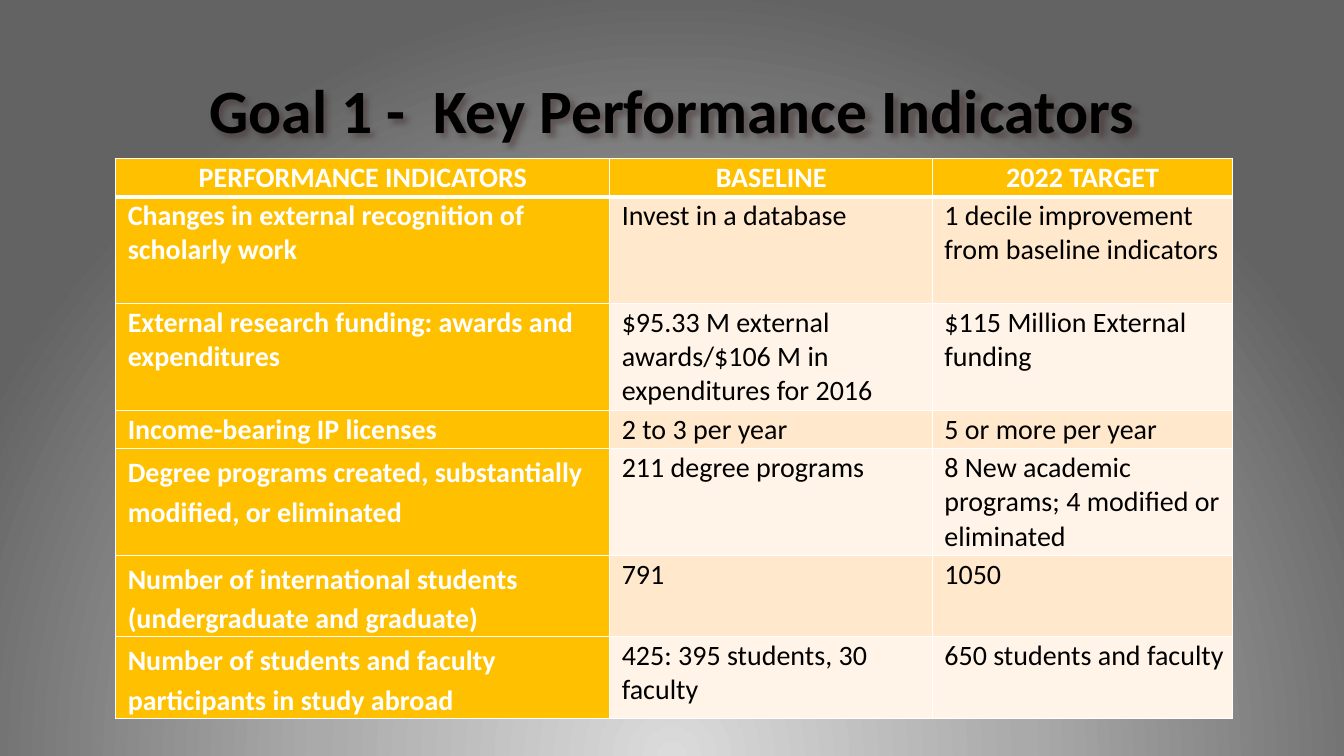
from lxml import etree
from pptx import Presentation
from pptx.dml.color import RGBColor
from pptx.enum.text import MSO_ANCHOR, PP_ALIGN
from pptx.oxml import parse_xml
from pptx.oxml.ns import nsdecls, qn
from pptx.util import Cm, Pt

CENTER, LEFT = PP_ALIGN.CENTER, PP_ALIGN.LEFT
MIDDLE, TOP = MSO_ANCHOR.MIDDLE, MSO_ANCHOR.TOP
BLACK = RGBColor(0x00, 0x00, 0x00)
WHITE = RGBColor(0xFF, 0xFF, 0xFF)
GOLD = RGBColor(0xFF, 0xC0, 0x00)
PEACH = RGBColor(0xFF, 0xE8, 0xCC)
CREAM = RGBColor(0xFF, 0xF4, 0xE7)
SHADOW = RGBColor(0x3A, 0x20, 0x20)
GLOW = RGBColor(0xDB, 0xDB, 0xDB)
SILVER = RGBColor(0xAA, 0xAA, 0xAA)
GRAPHITE = RGBColor(0x63, 0x63, 0x63)

COLUMN_WIDTHS = (12.45, 8.13, 7.57)
HEADER_HEIGHT = 0.97
HEADINGS = ("PERFORMANCE INDICATORS", "BASELINE", "2022 TARGET")
# fields: row height, line spacing of the indicator, indicator, baseline, target
INDICATORS = (
    (2.69, 1, "Changes in external recognition of scholarly work",
     "Invest in a database", "1 decile improvement from baseline indicators"),
    (2.69, 1, "External research funding: awards and expenditures",
     "$95.33 M external awards/$106 M in expenditures for 2016",
     "$115 Million External funding"),
    (0.97, 1, "Income-bearing IP licenses", "2 to 3 per year", "5 or more per year"),
    (2.69, 1.15, "Degree programs created, substantially modified, or eliminated",
     "211 degree programs", "8 New academic programs; 4 modified or eliminated"),
    (2.03, 1.15, "Number of international students (undergraduate and graduate)",
     "791", "1050"),
    (2.03, 1.15, "Number of students and faculty participants in study abroad",
     "425: 395 students, 30 faculty", "650 students and faculty"),
)


def write(frame, text, size=20, color=BLACK, bold=False, align=LEFT, spacing=1, indent=0):
    """Put one formatted paragraph into a text frame."""
    paragraph = frame.paragraphs[0]
    paragraph.alignment = align
    paragraph.line_spacing = spacing
    if indent:
        properties = paragraph._p.get_or_add_pPr()
        properties.set("marL", str(Cm(indent)))
        properties.set("indent", "0")
    run = paragraph.add_run()
    run.text = text
    run.font.name = "Calibri"
    run.font.size = Pt(size)
    run.font.bold = bold
    run.font.color.rgb = color


def paint_background(slide):
    """Fill the slide with a circular glow rising from below its bottom edge."""
    slide.background.fill.solid()
    properties = slide.element.find(".//" + qn("p:bgPr"))
    stops = "".join(
        f'<a:gs pos="{place * 1000}"><a:srgbClr val="{color}"/></a:gs>'
        for place, color in ((0, GLOW), (46, SILVER), (100, GRAPHITE)))
    properties.replace(properties[0], parse_xml(
        f'<a:gradFill {nsdecls("a")} rotWithShape="1"><a:gsLst>{stops}</a:gsLst>'
        '<a:path path="circle"><a:fillToRect l="50000" t="130000" r="50000" b="-30000"/>'
        '</a:path></a:gradFill>'))


def add_title(slide, left, top, width, height):
    """Place the shadowed slide title in the given box."""
    title = slide.shapes.add_textbox(Cm(left), Cm(top), Cm(width), Cm(height))
    title.text_frame.word_wrap = True
    title.text_frame.vertical_anchor = MIDDLE
    write(title.text_frame, "Goal 1 -  Key Performance Indicators",
          size=44, bold=True, align=CENTER, spacing=0.9)
    title._element.spPr.append(parse_xml(
        f'<a:effectLst {nsdecls("a")}>'
        f'<a:outerShdw blurRad="{Pt(4)}" dist="{Pt(3)}" dir="2700000" algn="tl">'
        f'<a:srgbClr val="{SHADOW}"><a:alpha val="43000"/></a:srgbClr>'
        '</a:outerShdw></a:effectLst>'))


def set_borders(cell, top=1, bottom=1):
    """Draw white borders around a table cell, with widths in points."""
    properties = cell._tc.get_or_add_tcPr()
    widths = {"lnL": 1, "lnR": 1, "lnT": top, "lnB": bottom}
    for position, (side, width) in enumerate(widths.items()):
        line = etree.Element(qn("a:" + side), w=str(Pt(width)))
        fill = etree.SubElement(line, qn("a:solidFill"))
        etree.SubElement(fill, qn("a:srgbClr"), val=str(WHITE))
        properties.insert(position, line)


def fill_cell(cell, text, fill, anchor=TOP, top=1, bottom=1, **text_format):
    """Set the text, fill, margins and borders of a table cell."""
    cell.margin_left = cell.margin_right = Cm(0.05)
    cell.margin_top = cell.margin_bottom = Cm(0.05)
    cell.vertical_anchor = anchor
    cell.fill.solid()
    cell.fill.fore_color.rgb = fill
    write(cell.text_frame, text, **text_format)
    set_borders(cell, top, bottom)


def add_indicator_table(slide, left, top):
    """Place the table of performance indicators at the given corner."""
    heights = [HEADER_HEIGHT] + [indicator[0] for indicator in INDICATORS]
    table = slide.shapes.add_table(
        len(heights), len(COLUMN_WIDTHS), Cm(left), Cm(top),
        Cm(sum(COLUMN_WIDTHS)), Cm(sum(heights))).table
    table.horz_banding = False
    for column, width in zip(table.columns, COLUMN_WIDTHS):
        column.width = Cm(width)
    for row, height in zip(table.rows, heights):
        row.height = Cm(height)
    for column, heading in enumerate(HEADINGS):
        fill_cell(table.cell(0, column), heading, GOLD, anchor=MIDDLE, bottom=3,
                  color=WHITE, bold=True, align=CENTER)
    for row, (_, spacing, indicator, *values) in enumerate(INDICATORS, 1):
        top_border = 3 if row == 1 else 1
        fill_cell(table.cell(row, 0), indicator, GOLD, top=top_border,
                  color=WHITE, bold=True, spacing=spacing, indent=0.25)
        for column, value in enumerate(values, 1):
            fill_cell(table.cell(row, column), value, PEACH if row % 2 else CREAM,
                      top=top_border, indent=0.25)


def main():
    """Build the slide and save the presentation."""
    presentation = Presentation()
    presentation.slide_width, presentation.slide_height = Cm(33.87), Cm(19.05)
    slide = presentation.slides.add_slide(presentation.slide_layouts[6])
    paint_background(slide)
    add_title(slide, 2.34, 1.02, 29.21, 3.68)
    add_indicator_table(slide, 2.92, 3.99)
    presentation.save("out.pptx")


if __name__ == "__main__":
    main()
